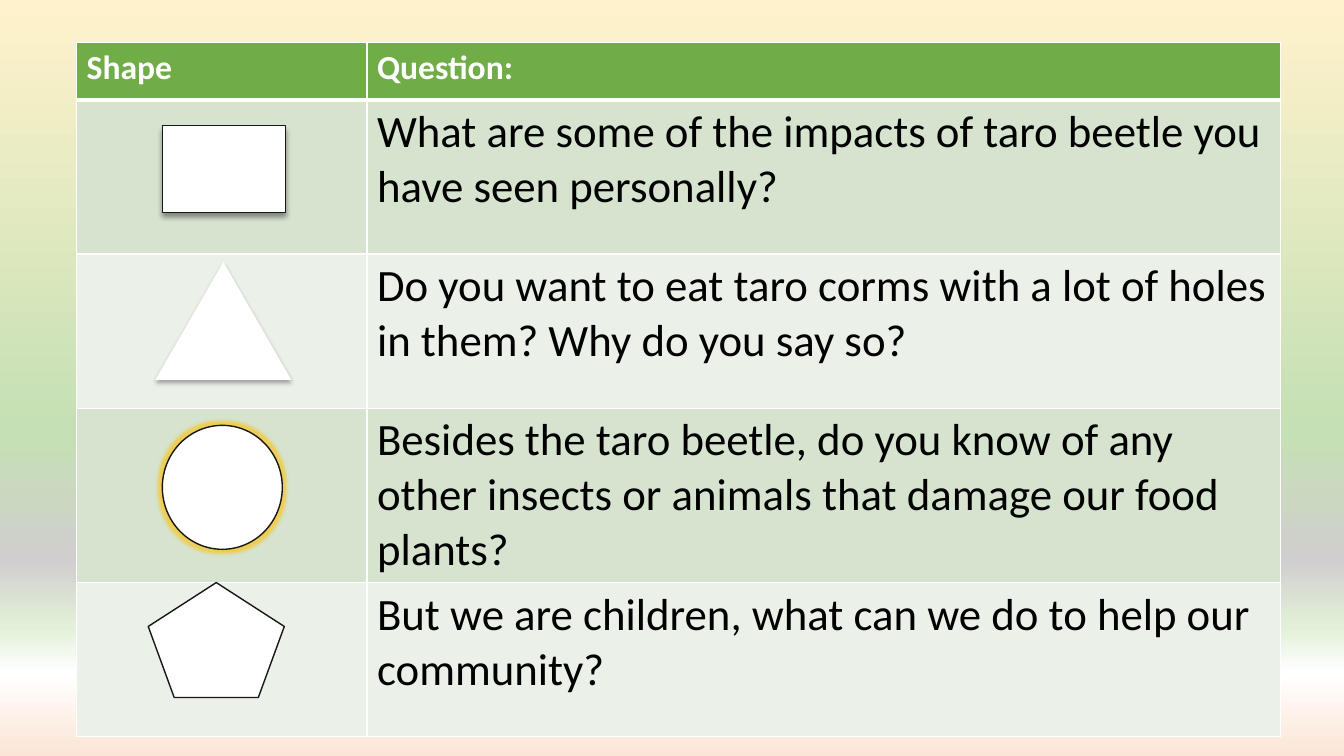
from pptx import Presentation
from pptx.dml.color import RGBColor
from pptx.enum.shapes import MSO_SHAPE
from pptx.oxml import parse_xml
from pptx.oxml.ns import nsdecls, qn
from pptx.util import Inches, Pt

HUES = {
    "head": "70AD47", "dark": "D5E3CF", "light": "EBF1E9",
    "white": "FFFFFF", "black": "000000", "edge": "181717", "glow": "FFC000",
}
STOPS = [(0, "FFF2CC"), (57, "C5E0B4"), (74, "D0CECE"),
         (83, "E2F0D9"), (89, "FFFFFF"), (100, "FBE5D6")]
ASKS = [
    "What are some of the impacts of taro beetle you have seen personally?",
    "Do you want to eat taro corms with a lot of holes in them? Why do you say so?",
    "Besides the taro beetle, do you know of any other insects or animals that damage our food plants?",
    "But we are children, what can we do to help our community?",
]
HEAD, ROW = 0.57, 1.53


def color(name):
    return RGBColor.from_string(HUES[name])


def node(body):
    return parse_xml(body.replace(">", f" {nsdecls('a')}>", 1))


def write(frame, text, size=32, hue="black", bold=False):
    para = frame.paragraphs[0]
    para.text = text
    font = para.font
    font.name, font.size, font.bold = "Calibri", Pt(size), bold
    font.color.rgb = color(hue)


def edge(cell, **sides):
    props = cell._tc.get_or_add_tcPr()
    for side in "LRTB":
        width = Pt(sides.get(side, 1))
        props.append(node(
            f'<a:ln{side} w="{width}"><a:solidFill><a:srgbClr val="{HUES["white"]}"/>'
            f'</a:solidFill></a:ln{side}>'))


def backdrop(slide):
    fill = slide.background.fill
    fill.gradient()
    fill.gradient_angle = 270
    stops = slide.element.find(".//" + qn("a:gsLst"))
    for stop in list(stops):
        stops.remove(stop)
    for spot, hue in STOPS:
        stops.append(node(f'<a:gs pos="{spot * 1000}"><a:srgbClr val="{hue}"/></a:gs>'))


def grid(slide, left, top, width):
    high = HEAD + ROW * len(ASKS)
    table = slide.shapes.add_table(
        len(ASKS) + 1, 2, Inches(left), Inches(top), Inches(width), Inches(high)).table
    table.columns[0].width = Inches(2.88)
    table.columns[1].width = Inches(width - 2.88)
    for i, row in enumerate(table.rows):
        row.height = Inches(ROW if i else HEAD)
        hue = ("light" if i % 2 == 0 else "dark") if i else "head"
        for cell in row.cells:
            edge(cell, T=3 if i == 1 else 1, B=1 if i else 3)
            cell.fill.solid()
            cell.fill.fore_color.rgb = color(hue)
    for cell, text in zip(table.rows[0].cells, ["Shape", "Question:"]):
        write(cell.text_frame, text, size=24, hue="white", bold=True)
    for i, text in enumerate(ASKS, 1):
        write(table.cell(i, 1).text_frame, text)


def shade(blur, dist, alpha):
    return (f'<a:outerShdw blurRad="{Pt(blur)}" dist="{Pt(dist)}" dir="5400000" '
            f'algn="ctr" rotWithShape="0"><a:srgbClr val="{HUES["black"]}">'
            f'<a:alpha val="{alpha * 1000}"/></a:srgbClr></a:outerShdw>')


def halo(size, alpha):
    return (f'<a:glow rad="{Pt(size)}"><a:srgbClr val="{HUES["glow"]}">'
            f'<a:alpha val="{alpha * 1000}"/></a:srgbClr></a:glow>')


def figure(slide, kind, box, line=0, effect=None):
    shape = slide.shapes.add_shape(kind, *map(Inches, box))
    shape.fill.solid()
    shape.fill.fore_color.rgb = color("white")
    if line:
        shape.line.color.rgb = color("edge")
        shape.line.width = Pt(line)
    else:
        shape.line.fill.background()
    shape.shadow.inherit = False
    if effect:
        shape.element.spPr.find(qn("a:effectLst")).append(node(effect))


def figures(slide, left, top):
    items = [
        (MSO_SHAPE.RECTANGLE, 0.85, 0.83, 1.22, 0.86, 0.75, shade(4, 3, 40)),
        (MSO_SHAPE.ISOSCELES_TRIANGLE, 0.78, 2.18, 1.35, 1.17, 0, shade(3.5, 2.2, 32)),
        (MSO_SHAPE.OVAL, 0.85, 3.8, 1.19, 1.23, 1, halo(5, 60)),
        (MSO_SHAPE.REGULAR_PENTAGON, 0.71, 5.36, 1.35, 1.14, 1, None),
    ]
    for kind, x, y, width, high, line, effect in items:
        figure(slide, kind, (left + x, top + y, width, high), line, effect)


def main():
    deck = Presentation()
    deck.slide_width, deck.slide_height = Inches(13.33), Inches(7.5)
    slide = deck.slides.add_slide(deck.slide_layouts[6])
    backdrop(slide)
    grid(slide, 0.76, 0.42, 11.94)
    figures(slide, 0.76, 0.42)
    deck.save("out.pptx")


if __name__ == "__main__":
    main()
